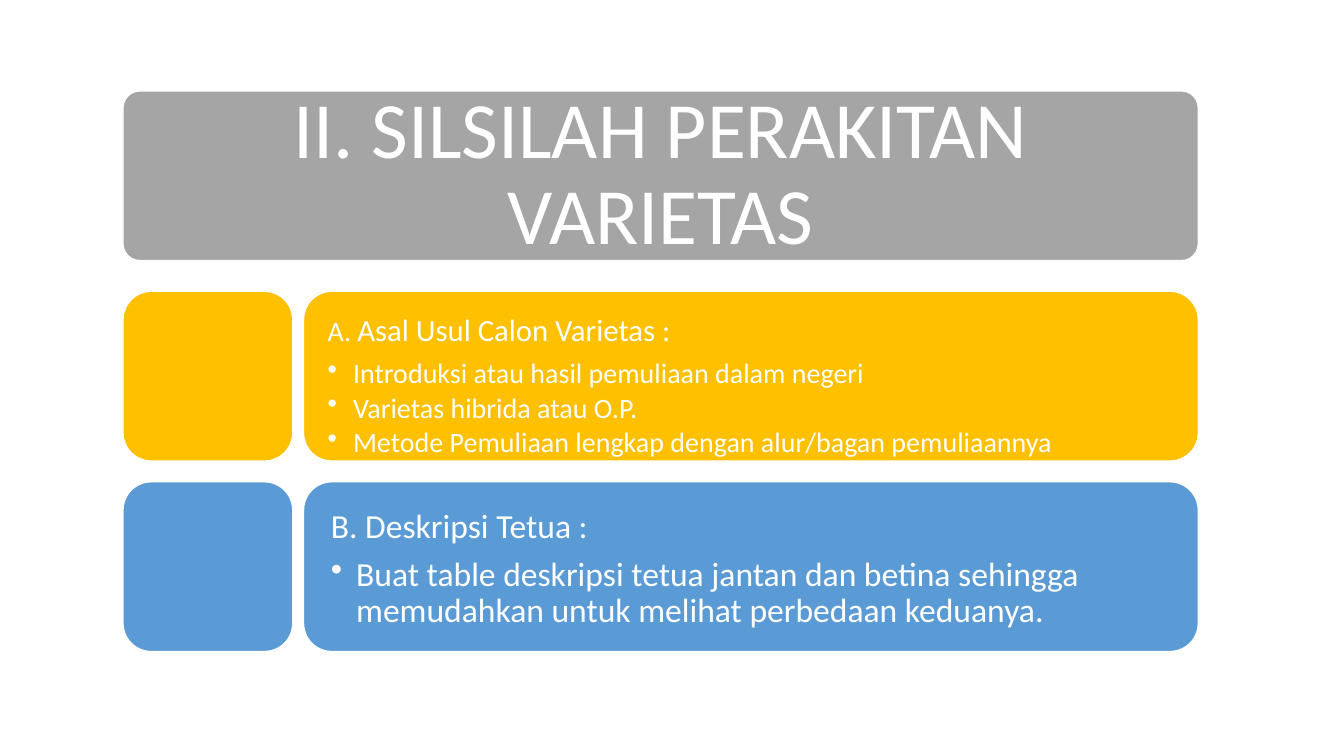
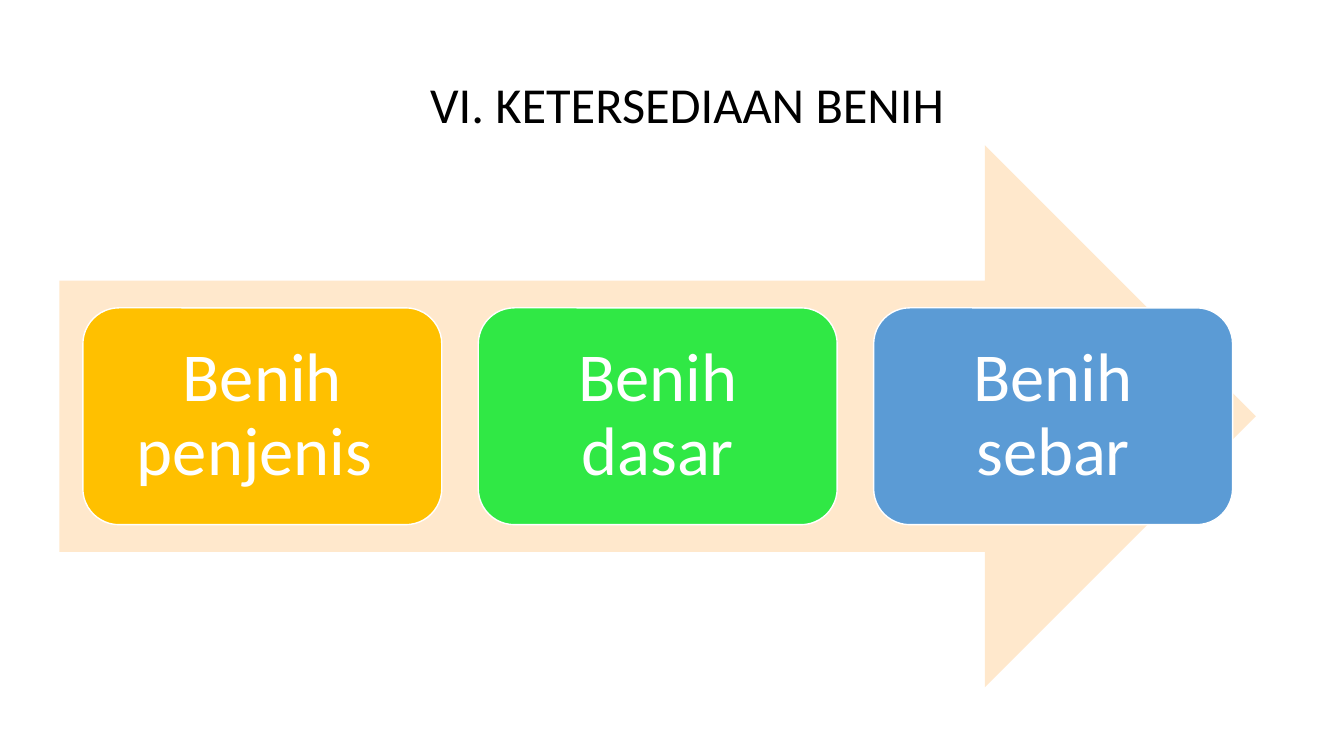
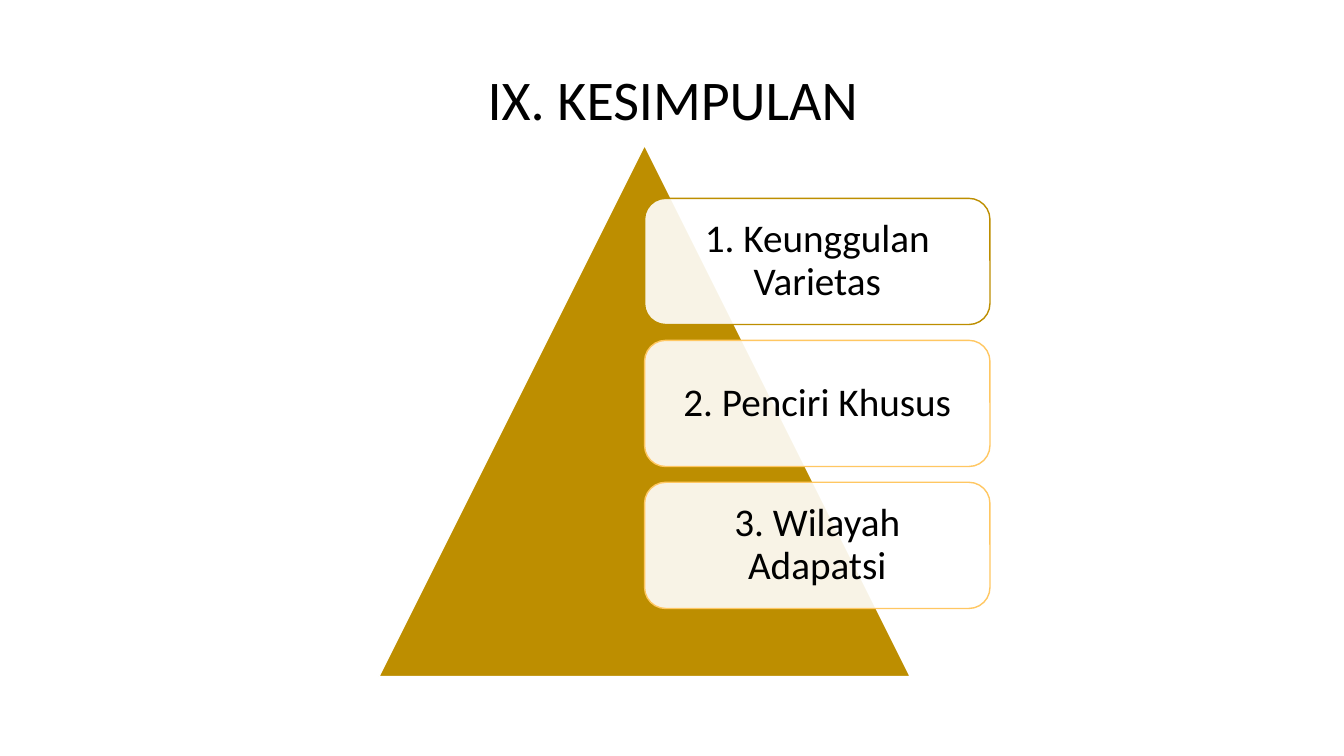
from lxml.etree import SubElement
from pptx import Presentation
from pptx.dml.color import RGBColor
from pptx.enum.shapes import MSO_SHAPE
from pptx.enum.text import MSO_ANCHOR, PP_ALIGN
from pptx.oxml.ns import qn
from pptx.util import Cm, Pt

FONT = "Calibri"
HUES = {
    "white": "FFFFFF", "black": "000000", "gray": "A5A5A5",
    "amber": "FFC000", "blue": "5B9BD5", "green": "30E845",
    "cream": "FFE8CC", "gold": "BD8E00", "sand": "FFC762",
}


def hue(name):
    return RGBColor.from_string(HUES[name])


def add_form(slide, kind, box, fill, line="white"):
    form = slide.shapes.add_shape(kind, *map(Cm, box))
    form.shadow.inherit = False
    form.fill.solid()
    form.fill.fore_color.rgb = hue(fill)
    if line:
        form.line.color.rgb = hue(line)
        form.line.width = Pt(1)
    else:
        form.line.fill.background()
    return form


def add_card(slide, box, fill, line="white"):
    return add_form(slide, MSO_SHAPE.ROUNDED_RECTANGLE, box, fill, line)


def set_frame(frame, across, down, anchor):
    frame.word_wrap = True
    frame.margin_left = frame.margin_right = Cm(across)
    frame.margin_top = frame.margin_bottom = Cm(down)
    frame.vertical_anchor = anchor


def style(para, size, color="white", align=PP_ALIGN.LEFT):
    para.alignment = align
    para.font.name = FONT
    para.font.size = Pt(size)
    para.font.color.rgb = hue(color)


def label(card, text, size, across, down, color="white"):
    """Write one centred text in a card."""
    frame = card.text_frame
    set_frame(frame, across, down, MSO_ANCHOR.MIDDLE)
    para = frame.paragraphs[0]
    para.text = text
    para.line_spacing = 0.9
    style(para, size, color, PP_ALIGN.CENTER)


def add_bullet(para):
    para.level = 1
    props = para._p.get_or_add_pPr()
    props.set("marL", str(Cm(0.64)))
    props.set("indent", str(-Cm(0.64)))
    mark = SubElement(props, qn("a:buChar"))
    mark.set("char", "•")


def fade(form, share):
    """Set the opacity of a solid fill, in percent."""
    color = form._element.spPr.find(qn("a:solidFill"))[0]
    SubElement(color, qn("a:alpha")).set("val", str(share * 1000))


def add_title(slide, text, size, box):
    frame = slide.shapes.add_textbox(*map(Cm, box)).text_frame
    frame.word_wrap = True
    frame.paragraphs[0].text = text
    style(frame.paragraphs[0], size, "black")


def add_row(slide, box, fill, head, items, size, inset):
    """Place a square and a text card; head is a list of (text, size)."""
    left, top, width, side = box
    gap = 0.27
    add_card(slide, (left, top, side, side), fill)
    card = add_card(
        slide, (left + side + gap, top, width - side - gap, side), fill)
    frame = card.text_frame
    set_frame(frame, inset, inset, MSO_ANCHOR.TOP)
    para = frame.paragraphs[0]
    style(para, head[-1][1])
    para.line_spacing = 0.9
    para.space_after = Pt(round(head[-1][1] * 0.35, 1))
    for text, points in head:
        run = para.add_run()
        run.text = text
        if len(head) > 1:
            run.font.size = Pt(points)
    for item in items:
        para = frame.add_paragraph()
        para.text = item
        para.line_spacing = 0.9
        para.space_after = Pt(round(size * 0.15, 1))
        add_bullet(para)
        style(para, size)


def origin_slide(slide, box):
    left, top, width, side = box
    banner = add_card(slide, box, "gray")
    banner.adjustments[0] = 0.1
    label(banner, "II. SILSILAH PERAKITAN VARIETAS", 57, 0.3, 0.2)
    rows = [
        ("amber", [("A. ", 20), ("Asal Usul Calon Varietas :", 22)],
         ["Introduksi atau hasil pemuliaan dalam negeri",
          "Varietas hibrida atau O.P.",
          "Metode Pemuliaan lengkap dengan alur/bagan pemuliaannya"],
         20, 0.4),
        ("blue", [("B. Deskripsi Tetua :", 24)],
         ["Buat table deskripsi tetua jantan dan betina sehingga "
          "memudahkan untuk melihat perbedaan keduanya."],
         24, 0.48),
    ]
    for i, row in enumerate(rows):
        add_row(slide, (left, top + 5.05 + i * 4.8, width, side), *row)


def seed_slide(slide, box):
    left, top, width, height = box
    add_form(slide, MSO_SHAPE.RIGHT_ARROW, box, "cream", None)
    steps = [("Benih penjenis ", "amber"), ("Benih dasar", "green"),
             ("Benih sebar", "blue")]
    wide, gap = width * 0.3, 0.92
    start = left + (width - 3 * wide - 2 * gap) / 2
    for i, (text, fill) in enumerate(steps):
        spot = (start + i * (wide + gap), top + height * 0.3,
                wide, height * 0.4)
        label(add_card(slide, spot, fill), text, 49, 0.52, 0.52)
    add_title(slide, "VI. KETERSEDIAAN BENIH", 36, (10.59, 1.73, 16.94, 1.8))


def closing_slide(slide, box):
    left, top, side, _ = box
    add_form(slide, MSO_SHAPE.ISOSCELES_TRIANGLE, box, "gold")
    points = [("1. Keunggulan Varietas", "gold"),
              ("2. Penciri Khusus", "sand"), ("3. Wilayah Adapatsi", "sand")]
    high = 3.18
    for i, (text, line) in enumerate(points):
        spot = (left + side / 2, top + side * 0.1 + i * high * 1.125,
                side * 0.65, high)
        card = add_card(slide, spot, "white", line)
        fade(card, 90)
        label(card, text, 28, 0.3, 0.3, "black")
    add_title(slide, "IX. KESIMPULAN", 40, (12.04, 1.5, 16.94, 1.96))


def main():
    deck = Presentation()
    deck.slide_width, deck.slide_height = Cm(33.87), Cm(19.05)
    pages = [
        (origin_slide, (3.1, 2.29, 27.1, 4.28)),
        (seed_slide, (1.5, 3.66, 30.15, 13.66)),
        (closing_slide, (9.55, 3.66, 13.39, 13.39)),
    ]
    for build, box in pages:
        build(deck.slides.add_slide(deck.slide_layouts[6]), box)
    deck.save("out.pptx")


if __name__ == "__main__":
    main()
